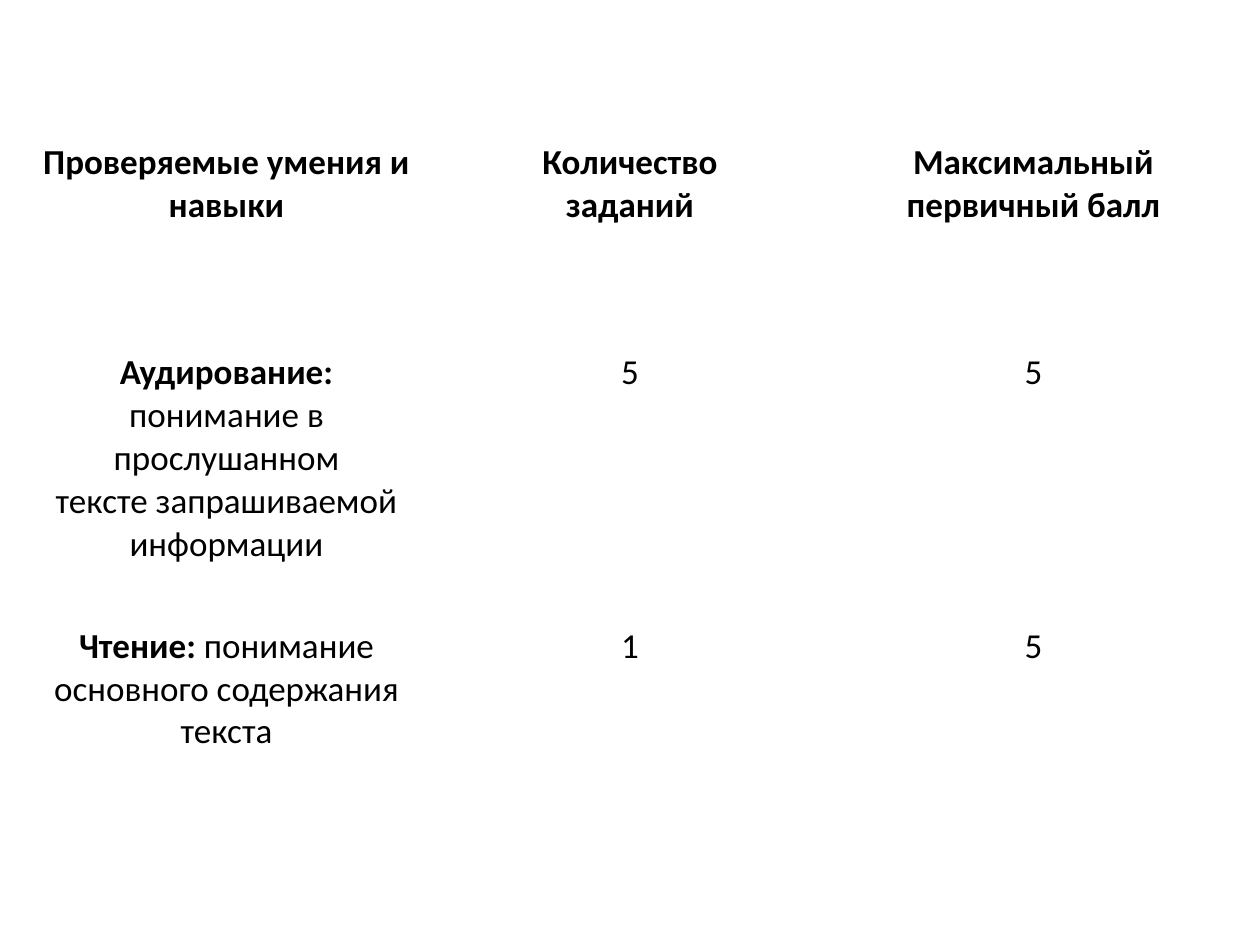
from pptx import Presentation
from pptx import util as u
from pptx.dml import color
from pptx.enum import text

BLACK = color.RGBColor(0, 0, 0)
WHITE = color.RGBColor(255, 255, 255)

HEADS = [
    "Проверяемые умения и навыки",
    "Количество\nзаданий",
    "Максимальный\nпервичный балл",
]
SKILLS = [
    ("Аудирование:", " понимание в прослушанном\nтексте запрашиваемой информации", "5", "5"),
    ("Чтение:", " понимание основного содержания\nтекста", "1", "5"),
]


class Deck:
    font = "Calibri"
    size = u.Pt(20)

    def __init__(self, wide, high):
        self.prs = Presentation()
        self.prs.slide_width, self.prs.slide_height = wide, high
        self.slide = self.prs.slides.add_slide(self.prs.slide_layouts[6])
        fill = self.slide.background.fill
        fill.solid()
        fill.fore_color.rgb = WHITE

    def grid(self, left, top, wide, highs, cols):
        frame = self.slide.shapes.add_table(len(highs), cols, left, top, wide, sum(highs))
        table = frame.table
        table.first_row = table.horz_banding = False
        for row, high in zip(table.rows, highs):
            row.height = high
        return table

    def cell(self, cell, body, lead="", bold=False):
        cell.fill.background()
        frame = cell.text_frame
        frame.text = lead or body
        if lead:
            first, *rest = body.split("\n")
            frame.paragraphs[0].add_run().text = first
            for line in rest:
                frame.add_paragraph().text = line
        for par in frame.paragraphs:
            par.alignment = text.PP_ALIGN.CENTER
            for run in par.runs:
                font = run.font
                font.name, font.size = self.font, self.size
                font.color.rgb = BLACK
                font.bold = bold
        if lead:
            frame.paragraphs[0].runs[0].font.bold = True

    def save(self):
        self.prs.save("out.pptx")


def main():
    deck = Deck(u.Cm(25.4), u.Cm(19.05))
    highs = [u.Cm(4.24), u.Cm(5.51), u.Cm(4.24)]
    table = deck.grid(u.Cm(0.5), u.Cm(2.72), u.Cm(24.4), highs, len(HEADS))
    for col, head in enumerate(HEADS):
        deck.cell(table.cell(0, col), head, bold=True)
    for row, (lead, skill, tasks, score) in enumerate(SKILLS, 1):
        deck.cell(table.cell(row, 0), skill, lead)
        deck.cell(table.cell(row, 1), tasks)
        deck.cell(table.cell(row, 2), score)
    deck.save()


if __name__ == "__main__":
    main()
